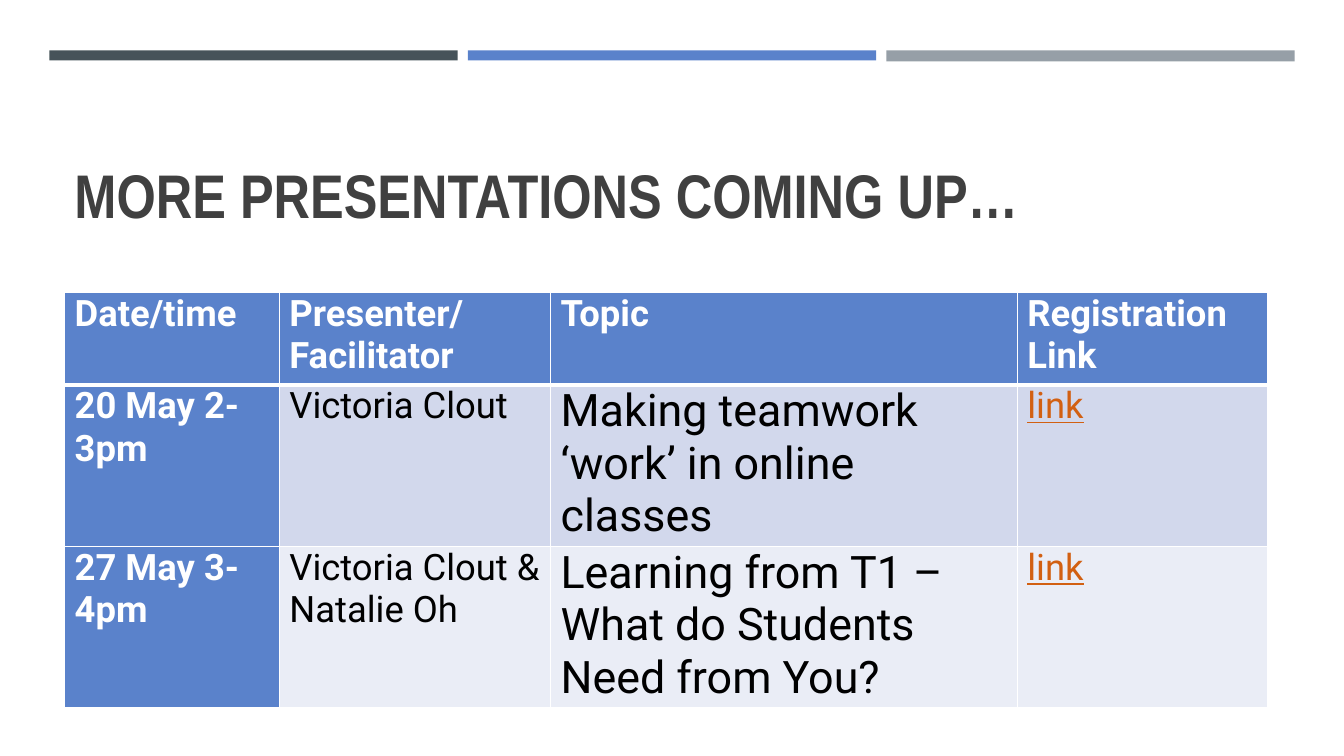
import dataclasses

import lxml.etree
import pptx
import pptx.dml.color
import pptx.enum.shapes
import pptx.enum.text
import pptx.oxml.ns
import pptx.util

SLIDE_WIDTH = pptx.util.Inches(13.33)
SLIDE_HEIGHT = pptx.util.Inches(7.5)
GRID_COLUMNS = 133.3
GRID_ROWS = 75

WHITE = "FFFFFF"
BLACK = "000000"
BLUE = "5A82CB"
LINK_ORANGE = "D26012"


@dataclasses.dataclass(frozen=True)
class Bar:
    color: str
    height: float = 1


@dataclasses.dataclass(frozen=True)
class TextStyle:
    size: int
    color: str
    bold: bool = False
    underline: bool = False
    font: str = "Roboto"


@dataclasses.dataclass(frozen=True)
class Session:
    cells: tuple[str, str, str, str]
    fill: str


BARS = (Bar("465359"), Bar(BLUE), Bar("969FA7", 1.1))
BAR_LEFT, BAR_TOP, BAR_WIDTH, BAR_STEP = 4.9, 5, 40.5, 41.5

TITLE_STYLE = TextStyle(44, "404040", bold=True, font="Arial Narrow")
HEADING_STYLE = TextStyle(26, WHITE, bold=True)
BODY_STYLES = (
    HEADING_STYLE,
    TextStyle(26, BLACK),
    TextStyle(32, BLACK),
    TextStyle(26, LINK_ORANGE, underline=True),
)
HEADINGS = ("Date/time", "Presenter/\nFacilitator", "Topic", "Registration Link")
SESSIONS = (
    Session(
        ("20 May 2-3pm", "Victoria Clout", "Making teamwork ‘work’ in online classes", "link"),
        "D2D8EC",
    ),
    Session(
        (
            "27 May 3-4pm",
            "Victoria Clout & Natalie Oh",
            "Learning from T1 – What do Students Need from You?",
            "link",
        ),
        "EAEDF6",
    ),
)
TABLE_COLUMNS = (21.3, 26.9, 46.3, 24.8)
TABLE_ROWS = (9.2, 15.6, 15.6)


def across(columns: float) -> int:
    return round(SLIDE_WIDTH * columns / GRID_COLUMNS)


def down(rows: float) -> int:
    return round(SLIDE_HEIGHT * rows / GRID_ROWS)


def rgb(color: str) -> pptx.dml.color.RGBColor:
    return pptx.dml.color.RGBColor.from_string(color)


def write_text(text_frame: pptx.text.text.TextFrame, text: str, style: TextStyle) -> None:
    text_frame.text = text
    for paragraph in text_frame.paragraphs:
        for run in paragraph.runs:
            run.font.name = style.font
            run.font.size = pptx.util.Pt(style.size)
            run.font.bold = style.bold
            run.font.underline = style.underline
            run.font.color.rgb = rgb(style.color)


def draw_bar(slide: pptx.slide.Slide, position: int, bar: Bar) -> None:
    shape = slide.shapes.add_shape(
        pptx.enum.shapes.MSO_SHAPE.RECTANGLE,
        across(BAR_LEFT + position * BAR_STEP),
        down(BAR_TOP),
        across(BAR_WIDTH),
        down(bar.height),
    )
    shape.shadow.inherit = False
    shape.fill.solid()
    shape.fill.fore_color.rgb = rgb(bar.color)
    shape.line.fill.background()


def draw_title(slide: pptx.slide.Slide) -> None:
    shape = slide.shapes.add_textbox(across(6.4), down(7.9), across(120.2), down(15.6))
    text_frame = shape.text_frame
    text_frame.word_wrap = True
    text_frame.vertical_anchor = pptx.enum.text.MSO_ANCHOR.BOTTOM
    write_text(text_frame, "MORE PRESENTATIONS COMING UP…", TITLE_STYLE)
    text_frame.paragraphs[0].line_spacing = 0.9


def draw_borders(cell: pptx.table._Cell, top: int, bottom: int) -> None:
    properties = cell._tc.get_or_add_tcPr()
    for tag, width in (("a:lnL", 1), ("a:lnR", 1), ("a:lnT", top), ("a:lnB", bottom)):
        line = lxml.etree.SubElement(
            properties, pptx.oxml.ns.qn(tag), w=str(pptx.util.Pt(width))
        )
        fill = lxml.etree.SubElement(line, pptx.oxml.ns.qn("a:solidFill"))
        lxml.etree.SubElement(fill, pptx.oxml.ns.qn("a:srgbClr"), val=WHITE)


def fill_cell(
    cell: pptx.table._Cell, text: str, style: TextStyle, fill: str, top: int, bottom: int
) -> None:
    cell.margin_left = cell.margin_right = across(1)
    cell.margin_top = cell.margin_bottom = 0
    draw_borders(cell, top, bottom)
    cell.fill.solid()
    cell.fill.fore_color.rgb = rgb(fill)
    write_text(cell.text_frame, text, style)


def draw_schedule(slide: pptx.slide.Slide) -> None:
    frame = slide.shapes.add_table(
        len(TABLE_ROWS),
        len(TABLE_COLUMNS),
        across(6.4),
        down(29),
        across(sum(TABLE_COLUMNS)),
        down(sum(TABLE_ROWS)),
    )
    table = frame.table
    for column, width in zip(table.columns, TABLE_COLUMNS):
        column.width = across(width)
    for row, height in zip(table.rows, TABLE_ROWS):
        row.height = down(height)
    for column_index, heading in enumerate(HEADINGS):
        fill_cell(table.cell(0, column_index), heading, HEADING_STYLE, BLUE, 1, 3)
    for row_index, session in enumerate(SESSIONS, start=1):
        top = 3 if row_index == 1 else 1
        for column_index, (text, style) in enumerate(zip(session.cells, BODY_STYLES)):
            fill = BLUE if column_index == 0 else session.fill
            fill_cell(table.cell(row_index, column_index), text, style, fill, top, 1)


def main() -> None:
    presentation = pptx.Presentation()
    presentation.slide_width = SLIDE_WIDTH
    presentation.slide_height = SLIDE_HEIGHT
    slide = presentation.slides.add_slide(presentation.slide_layouts[6])
    slide.background.fill.solid()
    slide.background.fill.fore_color.rgb = rgb(WHITE)
    draw_title(slide)
    for position, bar in enumerate(BARS):
        draw_bar(slide, position, bar)
    draw_schedule(slide)
    presentation.save("out.pptx")


if __name__ == "__main__":
    main()
